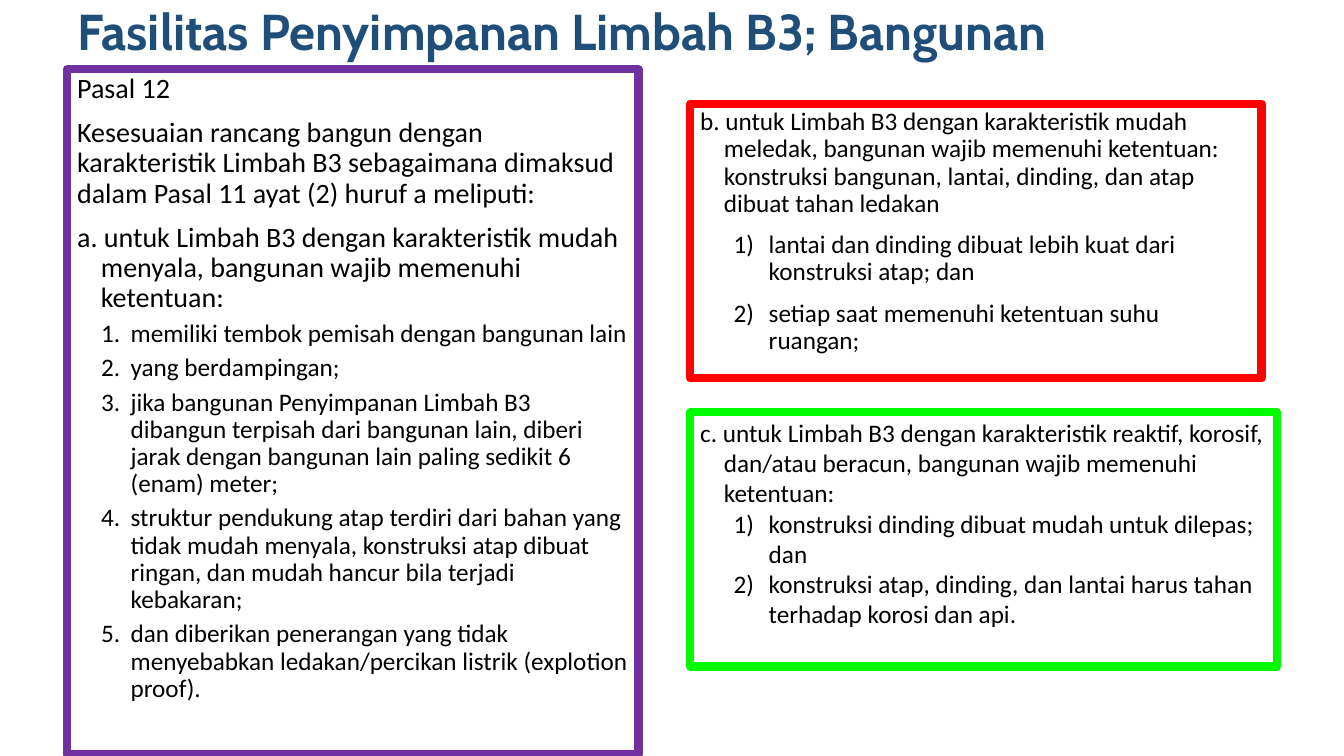
import pptx
import pptx.dml.color
import pptx.enum.text
import pptx.oxml.ns
import pptx.util
from lxml import etree

Pt = pptx.util.Pt
RGBColor = pptx.dml.color.RGBColor
BLACK = RGBColor(0x00, 0x00, 0x00)
NAVY = RGBColor(0x1F, 0x4E, 0x79)
PURPLE = RGBColor(0x70, 0x30, 0xA0)
RED = RGBColor(0xFF, 0x00, 0x00)
GREEN = RGBColor(0x00, 0xFA, 0x00)

BODY = {"size": Pt(20), "name": "Calibri"}
SMALL = {"size": Pt(18), "name": "Calibri"}
TITLE = {"size": Pt(36), "name": "Cabin", "bold": True}

PLAIN = (0, 0, None)
LETTERED = (17, -17, None)
STEP = (38.25, -21, "arabicPeriod")
CLAUSE = (49, -25, "arabicParenR")

FLAMMABLE = [
    ("Pasal 12", BODY, PLAIN, 0),
    ("Kesesuaian rancang bangun dengan karakteristik Limbah B3 sebagaimana "
     "dimaksud dalam Pasal 11 ayat (2) huruf a meliputi:", BODY, PLAIN, 10),
    ("a. untuk Limbah B3 dengan karakteristik mudah menyala, bangunan wajib "
     "memenuhi ketentuan:", BODY, LETTERED, 10),
] + [(text, SMALL, STEP, 5) for text in (
    "memiliki tembok pemisah dengan bangunan lain",
    "yang berdampingan;",
    "jika bangunan Penyimpanan Limbah B3 dibangun terpisah dari bangunan lain, "
    "diberi jarak dengan bangunan lain paling sedikit 6 (enam) meter;",
    "struktur pendukung atap terdiri dari bahan yang tidak mudah menyala, "
    "konstruksi atap dibuat ringan, dan mudah hancur bila terjadi kebakaran;",
    "dan diberikan penerangan yang tidak menyebabkan ledakan/percikan listrik "
    "(explotion proof).",
)]

EXPLOSIVE = [
    ("b. untuk Limbah B3 dengan karakteristik mudah meledak, bangunan wajib "
     "memenuhi ketentuan:\nkonstruksi bangunan, lantai, dinding, dan atap "
     "dibuat tahan ledakan", SMALL, LETTERED, 0),
    ("lantai dan dinding dibuat lebih kuat dari konstruksi atap; dan",
     SMALL, CLAUSE, 10),
    ("setiap saat memenuhi ketentuan suhu ruangan;", SMALL, CLAUSE, 10),
]

REACTIVE = [
    ("c. untuk Limbah B3 dengan karakteristik reaktif, korosif, dan/atau beracun, "
     "bangunan wajib memenuhi ketentuan:", SMALL, LETTERED, 0),
    ("konstruksi dinding dibuat mudah untuk dilepas; dan", SMALL, CLAUSE, 0),
    ("konstruksi atap, dinding, dan lantai harus tahan terhadap korosi dan api.",
     SMALL, CLAUSE, 0),
]


class SlideBuilder:
    def __init__(self, page, border_width):
        self.page = page
        self.border_width = border_width

    def text_box(self, bounds, paragraphs, color=BLACK, line_spacing=0.9):
        box = self.page.shapes.add_textbox(*map(Pt, bounds))
        frame = box.text_frame
        frame.word_wrap = True
        for index, (text, style, indent, space_before) in enumerate(paragraphs):
            para = frame.add_paragraph() if index else frame.paragraphs[0]
            layout = {"line_spacing": line_spacing, "space_before": Pt(space_before)}
            for name, value in layout.items():
                setattr(para, name, value)
            self.indent(para, *indent)
            para.text = text
            for span in para.runs:
                for name, value in style.items():
                    setattr(span.font, name, value)
                span.font.color.rgb = color
        return box

    def indent(self, para, left, first, numbering):
        properties = para._p.get_or_add_pPr()
        properties.set("marL", str(Pt(left)))
        properties.set("indent", str(Pt(first)))
        if numbering:
            etree.SubElement(properties, pptx.oxml.ns.qn("a:buAutoNum"), type=numbering)

    def bordered_box(self, bounds, paragraphs, border, line_spacing=0.9):
        box = self.text_box(bounds, paragraphs, line_spacing=line_spacing)
        box.line.color.rgb = border
        box.line.width = self.border_width

    def title(self, bounds, text):
        box = self.text_box(bounds, [(text, TITLE, PLAIN, 0)], NAVY)
        box.text_frame.vertical_anchor = pptx.enum.text.MSO_ANCHOR.MIDDLE


def main():
    deck = pptx.Presentation()
    deck.slide_width, deck.slide_height = Pt(960), Pt(540)
    page = deck.slides.add_slide(deck.slide_layouts[6])
    builder = SlideBuilder(page, Pt(6))
    builder.bordered_box((48, 49.5, 408, 489.5), FLAMMABLE, PURPLE)
    builder.bordered_box((493, 74.25, 408, 196), EXPLOSIVE, RED)
    builder.bordered_box((493, 294.5, 419, 181.5), REACTIVE, GREEN, 1.0)
    builder.title((48, 0, 828, 49.5), "Fasilitas Penyimpanan Limbah B3; Bangunan")
    deck.save("out.pptx")


if __name__ == "__main__":
    main()
